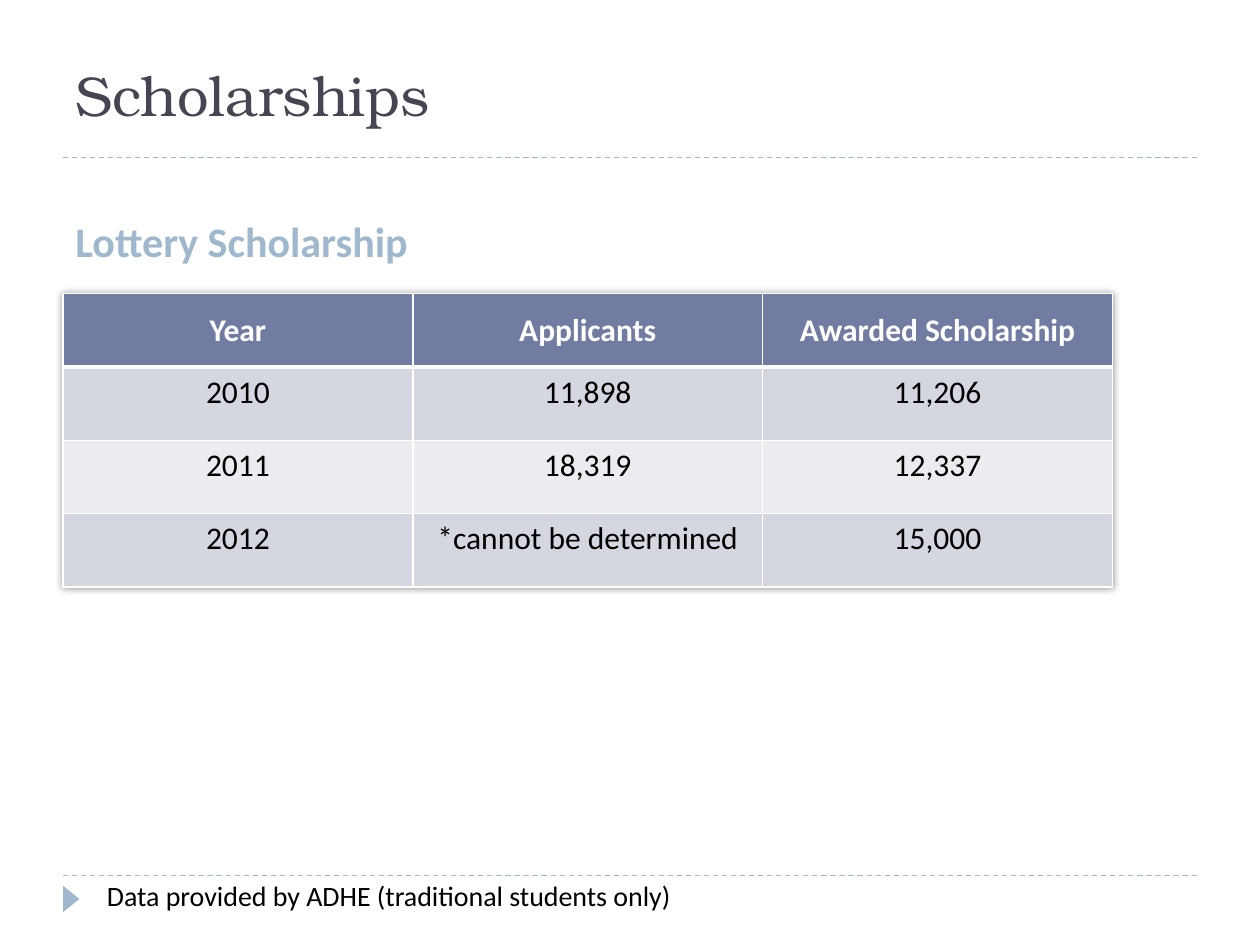
from lxml import etree
from pptx import Presentation
from pptx.dml.color import RGBColor
from pptx.enum.dml import MSO_LINE
from pptx.enum.shapes import MSO_CONNECTOR, MSO_SHAPE
from pptx.enum.text import MSO_ANCHOR, PP_ALIGN
from pptx.oxml import parse_xml
from pptx.oxml.ns import nsdecls, qn
from pptx.util import Inches, Pt

STRAIGHT = MSO_CONNECTOR.STRAIGHT
TRIANGLE = MSO_SHAPE.ISOSCELES_TRIANGLE
DASH = MSO_LINE.DASH
TOP, MIDDLE, BOTTOM = MSO_ANCHOR.TOP, MSO_ANCHOR.MIDDLE, MSO_ANCHOR.BOTTOM
LEFT, CENTER = PP_ALIGN.LEFT, PP_ALIGN.CENTER

WIDTH, HEIGHT = 10, 7.5
MARGIN = 0.5
CONTENT_WIDTH = WIDTH - 2 * MARGIN
SERIF, SANS = "TeX Gyre Bonum", "Calibri"
INK, ACCENT, BLACK, WHITE = "464653", "9FB8CD", "000000", "FFFFFF"
HEADER_FILL = "727CA3"
BAND_FILLS = ("D5D7E0", "EBECF0")

ROWS = [
    ("Year", "Applicants", "Awarded Scholarship"),
    ("2010", "11,898", "11,206"),
    ("2011", "18,319", "12,337"),
    ("2012", "*cannot be determined", "15,000"),
]


def color(value):
    return RGBColor.from_string(value)


def write(frame, text, size, font, ink, bold=False, align=LEFT):
    frame.text = text
    para = frame.paragraphs[0]
    para.alignment = align
    span = para.runs[0].font
    span.size, span.name, span.bold = Pt(size), font, bold
    span.color.rgb = color(ink)


def add_text(page, box, text, size, font, ink, bold=False, anchor=TOP):
    frame = page.shapes.add_textbox(*map(Inches, box)).text_frame
    frame.word_wrap = True
    frame.vertical_anchor = anchor
    write(frame, text, size, font, ink, bold)


def add_rule(page, left, top, width):
    """Draw a dashed horizontal line."""
    rule = page.shapes.add_connector(
        STRAIGHT, *map(Inches, (left, top, left + width, top)))
    rule.line.color.rgb = color(ACCENT)
    rule.line.width = Pt(0.75)
    rule.line.dash_style = DASH
    etree.SubElement(rule._element.spPr, qn("a:effectLst"))


def add_heading(page, left, top, width, height):
    add_text(page, (left, top, width, height), "Scholarships", 32, SERIF, INK,
             anchor=MIDDLE)
    add_rule(page, left, top + height, width)


def set_borders(cell, **points):
    """Give the cell white borders; widths are keyed L, R, T and B."""
    properties = cell._tc.get_or_add_tcPr()
    for side in "LRTB":
        properties.append(parse_xml(
            f'<a:ln{side} {nsdecls("a")} w="{Pt(points.get(side, 1))}">'
            f'<a:solidFill><a:srgbClr val="{WHITE}"/></a:solidFill>'
            f'</a:ln{side}>'))


def add_table_shadow(table):
    table._tbl.tblPr.insert(0, parse_xml(
        f'<a:effectLst {nsdecls("a")}>'
        '<a:outerShdw blurRad="50800" dist="0" dir="5400000">'
        '<a:srgbClr val="000000"><a:alpha val="40000"/></a:srgbClr>'
        '</a:outerShdw></a:effectLst>'))


def add_scholarship_table(page, left, top, width, height):
    table = page.shapes.add_table(
        len(ROWS), len(ROWS[0]),
        *map(Inches, (left, top, width, height))).table
    add_table_shadow(table)
    for row, values in enumerate(ROWS):
        header = row == 0
        for column, text in enumerate(values):
            cell = table.cell(row, column)
            set_borders(cell, B=3 if header else 1, T=3 if row == 1 else 1)
            cell.fill.solid()
            cell.fill.fore_color.rgb = color(
                HEADER_FILL if header else BAND_FILLS[(row - 1) % 2])
            cell.vertical_anchor = MIDDLE if header else TOP
            write(cell.text_frame, text, 18, SANS,
                  WHITE if header else BLACK, header, CENTER)


def add_footer(page, left, top, width):
    add_rule(page, left, top, width)
    marker = page.shapes.add_shape(
        TRIANGLE, *map(Inches, (left - 0.04, top + 0.12, 0.21, 0.13)))
    marker.rotation = 90
    marker.shadow.inherit = False
    marker.fill.solid()
    marker.fill.fore_color.rgb = color(ACCENT)
    marker.line.fill.background()
    add_text(page, (left + 0.25, top - 0.03, width - 0.25, 0.37),
             "Data provided by ADHE (traditional students only)",
             16, SANS, BLACK)


def main():
    deck = Presentation()
    deck.slide_width, deck.slide_height = Inches(WIDTH), Inches(HEIGHT)
    page = deck.slides.add_slide(deck.slide_layouts[6])
    add_heading(page, MARGIN, 0.25, CONTENT_WIDTH, 1)
    add_text(page, (MARGIN, 1.41, 4.42, 0.75), "Lottery Scholarship",
             24, SANS, ACCENT, bold=True, anchor=BOTTOM)
    add_scholarship_table(page, MARGIN, 2.33, 8.33, 2.33)
    add_footer(page, MARGIN, 6.95, CONTENT_WIDTH)
    deck.save("out.pptx")


if __name__ == "__main__":
    main()
